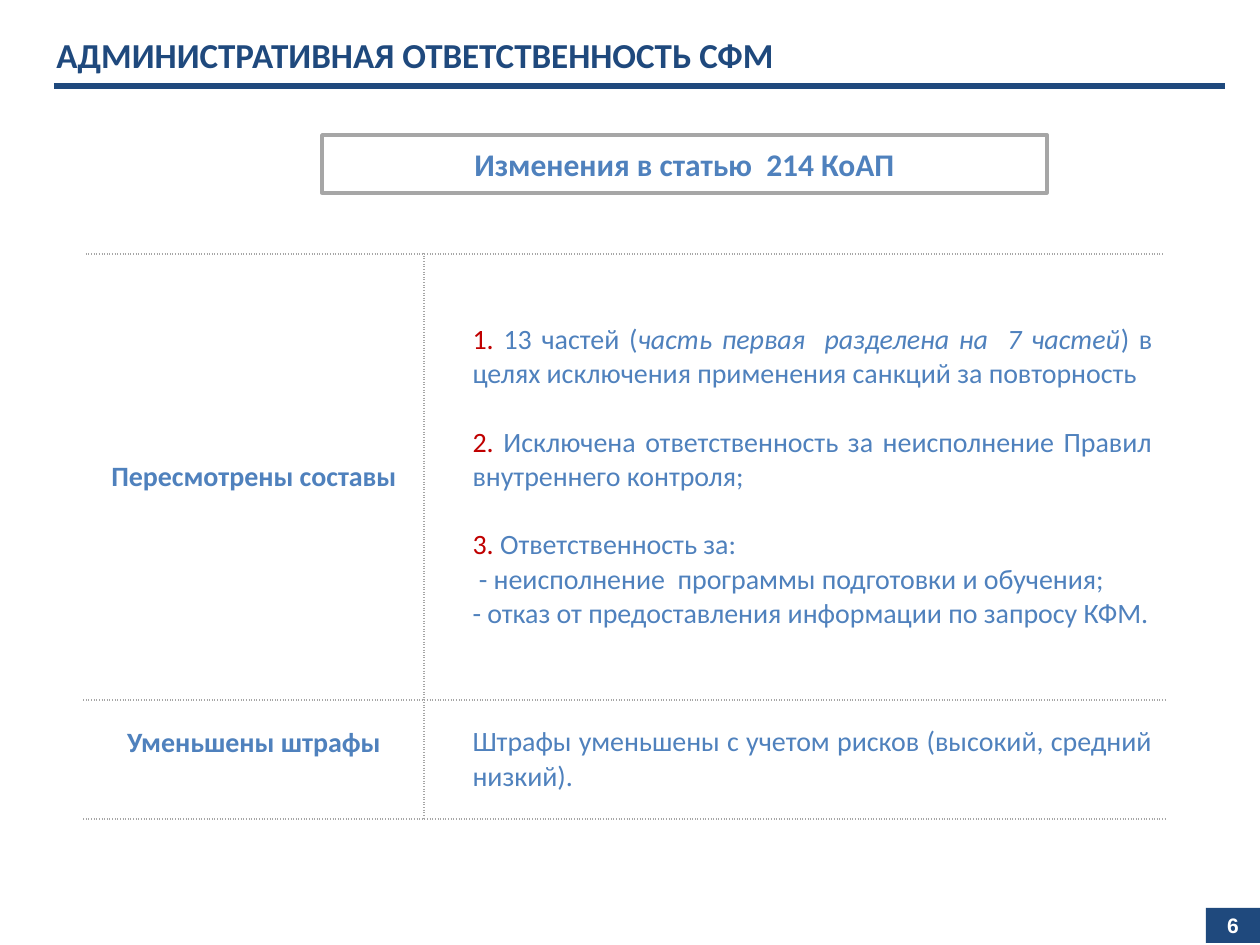
from lxml.etree import SubElement
from pptx import Presentation
from pptx.dml.color import RGBColor
from pptx.enum.shapes import MSO_CONNECTOR as Connector, MSO_SHAPE as Shape
from pptx.enum.text import MSO_ANCHOR as Anchor, PP_ALIGN as Align
from pptx.oxml.ns import qn
from pptx.util import Emu, Pt

NAVY = RGBColor(0x1F, 0x49, 0x7D)
BLUE = RGBColor(0x4F, 0x81, 0xBD)
RED = RGBColor(0xC0, 0x00, 0x00)
GRAY = RGBColor(0xA6, 0xA6, 0xA6)
WHITE = RGBColor(0xFF, 0xFF, 0xFF)

LABELS = ["Пересмотрены составы", "Уменьшены штрафы"]
DETAILS = [
    [
        (0, [("1. ", RED, False), ("13 частей (", BLUE, False),
             ("часть первая  разделена на  7 частей", BLUE, True),
             (") в целях исключения применения санкций за повторность", BLUE, False)]),
        (19.5, [("2. ", RED, False),
                ("Исключена ответственность за неисполнение Правил внутреннего контроля;", BLUE, False)]),
        (19.5, [("3. ", RED, False), ("Ответственность за:", BLUE, False)]),
        (0, [(" - неисполнение  программы подготовки и обучения;", BLUE, False)]),
        (0, [("- отказ от предоставления информации по запросу КФМ.", BLUE, False)]),
    ],
    [(0, [("Штрафы уменьшены с учетом рисков (высокий, средний низкий).", BLUE, False)])],
]


def px(length):
    return Emu(round(length * 914400 / 126))


class SlideBuilder:
    font = "Calibri"
    table_size = 16

    def __init__(self, deck):
        self.slide = deck.slides.add_slide(deck.slide_layouts[6])

    def style(self, span, size, color, bold=False, italic=False, font=None):
        span.font.name = font or self.font
        span.font.size = Pt(size)
        span.font.color.rgb = color
        span.font.bold = bold
        span.font.italic = italic

    def title(self, text, left, top, width, height):
        box = self.slide.shapes.add_textbox(px(left), px(top), px(width), px(height))
        box.text_frame.word_wrap = True
        box.text_frame.text = text
        self.style(box.text_frame.paragraphs[0].runs[0], 20, NAVY, bold=True)

    def rule(self, left, right, y):
        line = self.slide.shapes.add_connector(Connector.STRAIGHT, px(left), px(y), px(right), px(y))
        line.line.color.rgb = NAVY
        line.line.width = Pt(3)
        SubElement(line._element.spPr, qn("a:effectLst"))

    def box(self, text, left, top, width, height, size, color, fill=None, outline=None, font=None):
        box = self.slide.shapes.add_shape(Shape.RECTANGLE, px(left), px(top), px(width), px(height))
        box.shadow.inherit = False
        if fill is None:
            box.fill.background()
        else:
            box.fill.solid()
            box.fill.fore_color.rgb = fill
        if outline is None:
            box.line.fill.background()
        else:
            box.line.color.rgb = outline
            box.line.width = Pt(2)
        frame = box.text_frame
        frame.vertical_anchor = Anchor.MIDDLE
        frame.text = text
        frame.paragraphs[0].alignment = Align.CENTER
        self.style(frame.paragraphs[0].runs[0], size, color, bold=True, font=font)

    def dress_cell(self, cell, sides):
        properties = cell._tc.get_or_add_tcPr()
        for side in sides:
            border = SubElement(properties, qn(f"a:ln{side}"), w=str(Pt(1)))
            paint = SubElement(border, qn("a:solidFill"))
            SubElement(paint, qn("a:srgbClr"), val=str(GRAY))
            SubElement(border, qn("a:prstDash"), val="sysDot")
        cell.fill.solid()
        cell.fill.fore_color.rgb = WHITE
        cell.vertical_anchor = Anchor.MIDDLE

    def label(self, cell, text):
        self.dress_cell(cell, "RTB")
        cell.text = text
        para = cell.text_frame.paragraphs[0]
        para.alignment = Align.CENTER
        self.style(para.runs[0], self.table_size, BLUE, bold=True)

    def details(self, cell, paragraphs):
        self.dress_cell(cell, "LTB")
        frame = cell.text_frame
        for index, (gap, spans) in enumerate(paragraphs):
            para = frame.add_paragraph() if index else frame.paragraphs[0]
            para.alignment = Align.JUSTIFY
            para.space_before = Pt(gap)
            para._p.get_or_add_pPr().set("marL", str(px(36)))
            for text, color, italic in spans:
                span = para.add_run()
                span.text = text
                self.style(span, self.table_size, color, italic=italic)

    def table(self, left, top, widths, heights):
        frame = self.slide.shapes.add_table(
            len(heights), len(widths), px(left), px(top), px(sum(widths)), px(sum(heights)))
        table = frame.table
        table.first_row = table.horz_banding = False
        for column, width in zip(table.columns, widths):
            column.width = px(width)
        for row, height in zip(table.rows, heights):
            row.height = px(height)
        for index, (name, paragraphs) in enumerate(zip(LABELS, DETAILS)):
            self.label(table.cell(index, 0), name)
            self.details(table.cell(index, 1), paragraphs)
        table.cell(1, 0).margin_bottom = px(40)


def main():
    deck = Presentation()
    deck.slide_width, deck.slide_height = px(1260), px(945)
    page = SlideBuilder(deck)
    page.title("АДМИНИСТРАТИВНАЯ ОТВЕТСТВЕННОСТЬ СФМ", 44, 27, 1181, 55)
    page.rule(54, 1225, 86)
    page.table(84, 254, [340, 741], [446, 119])
    page.box("Изменения в статью  214 КоАП", 322, 135, 725, 58, 18, BLUE, outline=GRAY)
    page.box("6", 1206, 908, 54, 35, 12, WHITE, fill=NAVY, font="Arial")
    deck.save("out.pptx")


if __name__ == "__main__":
    main()
